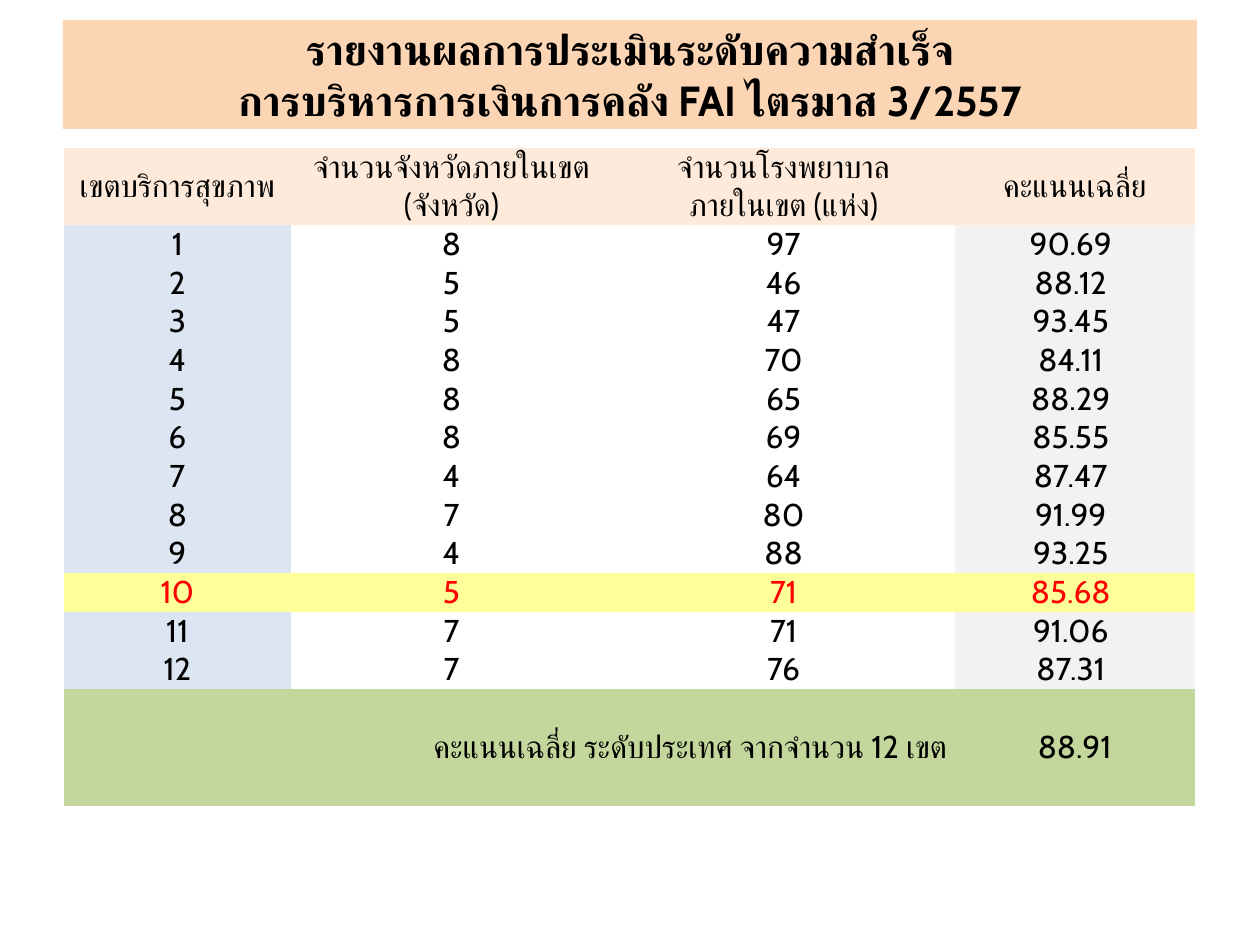
import dataclasses

import pptx
import pptx.dml.color
import pptx.enum.text
import pptx.oxml
import pptx.oxml.ns
import pptx.util

Cm = pptx.util.Cm
Align = pptx.enum.text.PP_ALIGN
Anchor = pptx.enum.text.MSO_ANCHOR

FONT = "Cabin"
COLORS = {
    "title": "FCD5B5", "header": "FDEADA", "region": "DCE6F2",
    "plain": "FFFFFF", "score": "F2F2F2", "highlight": "FFFF99",
    "total": "C3D69B", "text": "000000", "alert": "FF0000",
}
NO_STYLE = "{2D5ABB26-0587-4C30-8999-92F81FD0307C}"
COLUMN_WIDTHS = (4.57, 6.48, 6.91, 4.83)
COLUMN_FILLS = ("region", "plain", "plain", "score")
HEADER_HEIGHT, ROW_HEIGHT, TOTAL_HEIGHT = 1.55, 0.78, 2.36
TEXT_GAP = 0.16
HIGHLIGHTED_REGION = 10


@dataclasses.dataclass
class Region:
    number: int
    provinces: int
    hospitals: int
    score: float

    def texts(self) -> tuple[str, ...]:
        return (str(self.number), str(self.provinces),
                str(self.hospitals), f"{self.score:.2f}")


HEADERS = ("เขตบริการสุขภาพ", "จำนวนจังหวัดภายในเขต (จังหวัด)",
           "จำนวนโรงพยาบาล\nภายในเขต (แห่ง)", "คะแนนเฉลี่ย")
REGIONS = (
    Region(1, 8, 97, 90.69), Region(2, 5, 46, 88.12),
    Region(3, 5, 47, 93.45), Region(4, 8, 70, 84.11),
    Region(5, 8, 65, 88.29), Region(6, 8, 69, 85.55),
    Region(7, 4, 64, 87.47), Region(8, 7, 80, 91.99),
    Region(9, 4, 88, 93.25), Region(10, 5, 71, 85.68),
    Region(11, 7, 71, 91.06), Region(12, 7, 76, 87.31),
)


def rgb(name: str) -> pptx.dml.color.RGBColor:
    return pptx.dml.color.RGBColor.from_string(COLORS[name])


def write_text(text_frame, text: str, *, size: int = 18, bold: bool = False,
               color: str = "text", align=Align.CENTER) -> None:
    text_frame.text = text
    for paragraph in text_frame.paragraphs:
        paragraph.alignment = align
        for run in paragraph.runs:
            run.font.name = FONT
            run.font.size = pptx.util.Pt(size)
            run.font.bold = bold
            run.font.color.rgb = rgb(color)
            # Thai letters take the complex script font
            script_font = pptx.oxml.parse_xml(
                f'<a:cs {pptx.oxml.ns.nsdecls("a")} typeface="{FONT}"/>')
            run.font._element.append(script_font)


def fill_cell(cell, text: str, fill: str, *, color: str = "text",
              align=Align.CENTER, right_margin: float = 0) -> None:
    cell.fill.solid()
    cell.fill.fore_color.rgb = rgb(fill)
    cell.margin_left = cell.margin_top = cell.margin_bottom = 0
    cell.margin_right = Cm(right_margin)
    cell.vertical_anchor = Anchor.MIDDLE
    write_text(cell.text_frame, text, color=color, align=align)


def add_title(slide) -> None:
    title = slide.shapes.add_textbox(Cm(1.27), Cm(0.4), Cm(22.86), Cm(2.2))
    title.fill.solid()
    title.fill.fore_color.rgb = rgb("title")
    title.text_frame.word_wrap = True
    title.text_frame.vertical_anchor = Anchor.MIDDLE
    write_text(title.text_frame,
               "รายงานผลการประเมินระดับความสำเร็จ\v"
               "การบริหารการเงินการคลัง FAI ไตรมาส 3/2557",
               size=24, bold=True)


def add_score_table(slide) -> None:
    heights = (HEADER_HEIGHT, *[ROW_HEIGHT] * len(REGIONS), TOTAL_HEIGHT)
    frame = slide.shapes.add_table(
        len(heights), len(COLUMN_WIDTHS), Cm(1.29), Cm(2.98),
        Cm(sum(COLUMN_WIDTHS)), Cm(sum(heights)))
    table = frame.table
    table.first_row = table.horz_banding = False
    table._tbl.tblPr.find(pptx.oxml.ns.qn("a:tableStyleId")).text = NO_STYLE
    for column, width in zip(table.columns, COLUMN_WIDTHS):
        column.width = Cm(width)
    for row, height in zip(table.rows, heights):
        row.height = Cm(height)

    # Header row
    for column, text in enumerate(HEADERS):
        fill_cell(table.cell(0, column), text, "header")

    # One row for each health region
    for row, region in enumerate(REGIONS, start=1):
        highlighted = region.number == HIGHLIGHTED_REGION
        for column, text in enumerate(region.texts()):
            fill_cell(table.cell(row, column), text,
                      "highlight" if highlighted else COLUMN_FILLS[column],
                      color="alert" if highlighted else "text",
                      right_margin=TEXT_GAP if column == 3 else 0)

    # National average
    last = len(heights) - 1
    label = table.cell(last, 0)
    label.merge(table.cell(last, 2))
    fill_cell(label, "คะแนนเฉลี่ย ระดับประเทศ จากจำนวน 12 เขต", "total",
              align=Align.RIGHT, right_margin=TEXT_GAP)
    fill_cell(table.cell(last, 3), "88.91", "total")


def main() -> None:
    presentation = pptx.Presentation()
    presentation.slide_width = Cm(25.4)
    presentation.slide_height = Cm(19.05)
    slide = presentation.slides.add_slide(presentation.slide_layouts[6])
    add_title(slide)
    add_score_table(slide)
    presentation.save("out.pptx")


if __name__ == "__main__":
    main()
